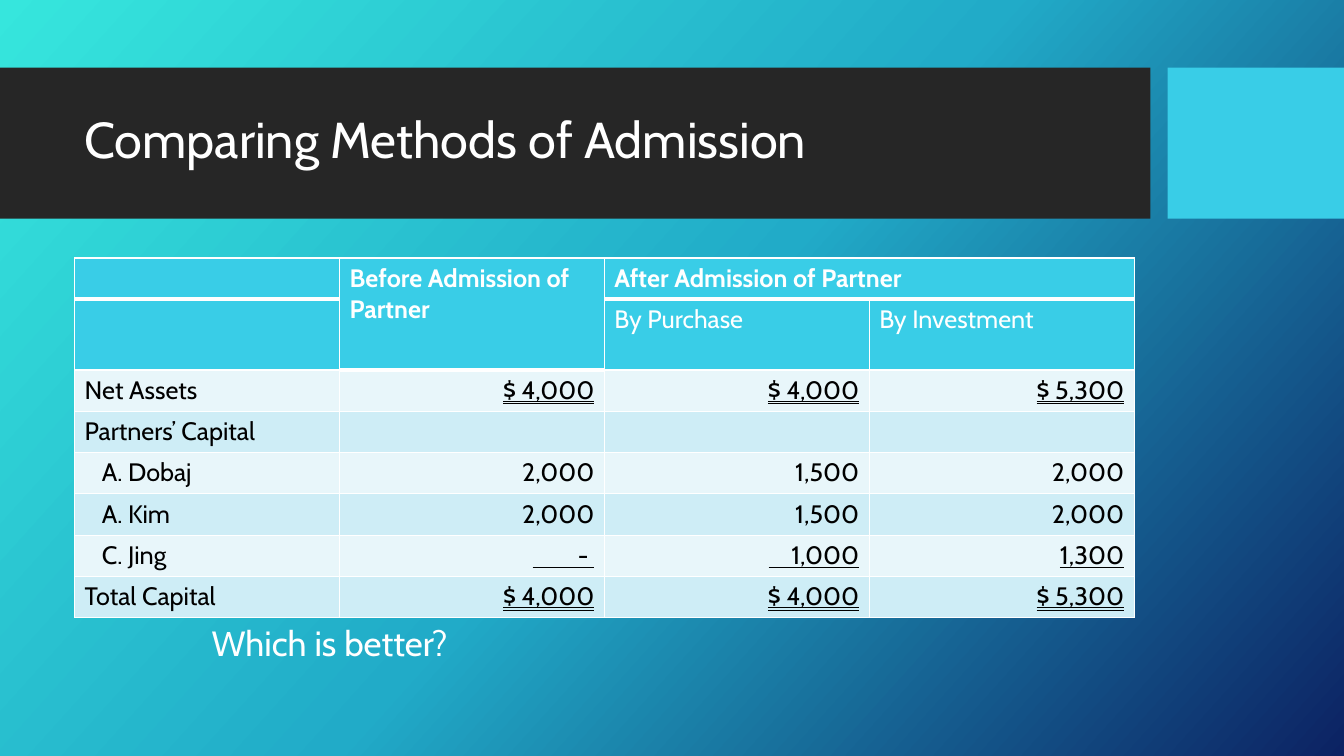
from copy import deepcopy

from pptx import Presentation
from pptx.dml.color import RGBColor
from pptx.enum.shapes import MSO_SHAPE as Shape
from pptx.enum.text import MSO_ANCHOR as Anchor, MSO_UNDERLINE as Underline, PP_ALIGN as Align
from pptx.oxml.ns import qn
from pptx.oxml.xmlchemy import OxmlElement
from pptx.util import Inches, Pt

# Content
TITLE = "Comparing Methods of Admission"
QUESTION = "Which is better?"
HEADER = [
    ["", "Before Admission of Partner", "After Admission of Partner", ""],
    ["", "", "By Purchase", "By Investment"],
]
BODY = [
    ["Net Assets", "$ 4,000", "$ 4,000", "$ 5,300"],
    ["Partners’ Capital", "", "", ""],
    ["A. Dobaj", "2,000", "1,500", "2,000"],
    ["A. Kim", "2,000", "1,500", "2,000"],
    # The spaces carry the visible subtotal rule
    ["C. Jing", "        - ", "    1,000", "1,300"],
    ["Total Capital", "$ 4,000", "$ 4,000", "$ 5,300"],
]
PARTNERS = {"A. Dobaj", "A. Kim", "C. Jing"}
UNDERLINES = {
    "Net Assets": Underline.DOUBLE_LINE,
    "C. Jing": Underline.SINGLE_LINE,
    "Total Capital": Underline.DOUBLE_LINE,
}

# Look
FONT = "Cabin"
WHITE, BLACK, DARK, CYAN = "FFFFFF", "000000", "262626", "39CDE7"
BANDS = ["E8F6FA", "CEEDF6"]
GRADIENT = [(0, "36E6DD"), (0.5, "21ABC8"), (1, "0C2263")]
BARS = [(0, 11.41, DARK), (11.58, 1.75, CYAN)]  # left, width, colour
BAR_TOP, BAR_HEIGHT = 0.67, 1.5
TABLE_LEFT, TABLE_TOP, TABLE_WIDTH = 0.74, 2.56, 10.51
ROW_HEIGHT, SUBHEADER_HEIGHT = 0.41, 0.7
PARTNER_INDENT = 0.27


def color(value):
    return RGBColor.from_string(value)


def fill(target, value):
    target.fill.solid()
    target.fill.fore_color.rgb = color(value)


def write(paragraph, text, ink, **formats):
    run = paragraph.add_run()
    run.text = text
    run.font.color.rgb = color(ink)
    for name, value in {"name": FONT, **formats}.items():
        setattr(run.font, name, value)


def add_text(slide, box, text, size, anchor=Anchor.TOP, spacing=1.0):
    frame = slide.shapes.add_textbox(*map(Inches, box)).text_frame
    frame.word_wrap = True
    frame.vertical_anchor = anchor
    paragraph = frame.paragraphs[0]
    paragraph.line_spacing = spacing
    write(paragraph, text, WHITE, size=Pt(size))


def set_borders(cell, bottom):
    properties = cell._tc.get_or_add_tcPr()
    widths = {"a:lnL": 1, "a:lnR": 1, "a:lnT": 1, "a:lnB": bottom}
    for position, (tag, width) in enumerate(widths.items()):
        line = OxmlElement(tag)
        line.set("w", str(Pt(width)))
        solid = OxmlElement("a:solidFill")
        ink = OxmlElement("a:srgbClr")
        ink.set("val", WHITE)
        solid.append(ink)
        line.append(solid)
        properties.insert(position, line)


def paint_background(slide):
    background = slide.background.fill
    background.gradient()
    background.gradient_angle = 360 - 42
    stop_list = next(slide.element.iter(qn("a:gsLst")))
    stop_list.append(deepcopy(stop_list[-1]))
    for stop, (position, value) in zip(background.gradient_stops, GRADIENT):
        stop.position = position
        stop.color.rgb = color(value)


def add_capital_table(slide):
    rows = HEADER + BODY
    heights = [ROW_HEIGHT] * len(rows)
    heights[1] = SUBHEADER_HEIGHT
    box = (TABLE_LEFT, TABLE_TOP, TABLE_WIDTH, sum(heights))
    table = slide.shapes.add_table(len(rows), len(rows[0]), *map(Inches, box)).table
    for row, height in zip(table.rows, heights):
        row.height = Inches(height)
    table.cell(0, 1).merge(table.cell(1, 1))
    table.cell(0, 2).merge(table.cell(0, 3))

    for r, values in enumerate(rows):
        is_header = r < len(HEADER)
        label = values[0]
        for c, text in enumerate(values):
            cell = table.cell(r, c)
            fill(cell, CYAN if is_header else BANDS[r % 2])
            set_borders(cell, 3 if r == 0 or (r, c) == (1, 1) else 1)
            if not text:
                continue
            paragraph = cell.text_frame.paragraphs[0]
            formats = {"size": Pt(18), "bold": r == 0}
            if not is_header and c > 0:
                paragraph.alignment = Align.RIGHT
                formats["underline"] = UNDERLINES.get(label)
            elif text in PARTNERS:
                cell.margin_left = Inches(PARTNER_INDENT)
            write(paragraph, text, WHITE if is_header else BLACK, **formats)


def main():
    presentation = Presentation()
    presentation.slide_width = Inches(13.33)
    presentation.slide_height = Inches(7.5)
    slide = presentation.slides.add_slide(presentation.slide_layouts[6])
    paint_background(slide)

    # Title band
    for left, width, value in BARS:
        bar = slide.shapes.add_shape(
            Shape.RECTANGLE, *map(Inches, (left, BAR_TOP, width, BAR_HEIGHT)))
        bar.shadow.inherit = False
        bar.line.fill.background()
        fill(bar, value)
    add_text(slide, (0.74, 0.82, 10.51, 1.18), TITLE, 36, Anchor.MIDDLE, 0.9)

    # Table and closing question
    add_capital_table(slide)
    add_text(slide, (2, 6.12, 2.83, 0.52), QUESTION, 25)

    presentation.save("out.pptx")


if __name__ == "__main__":
    main()
